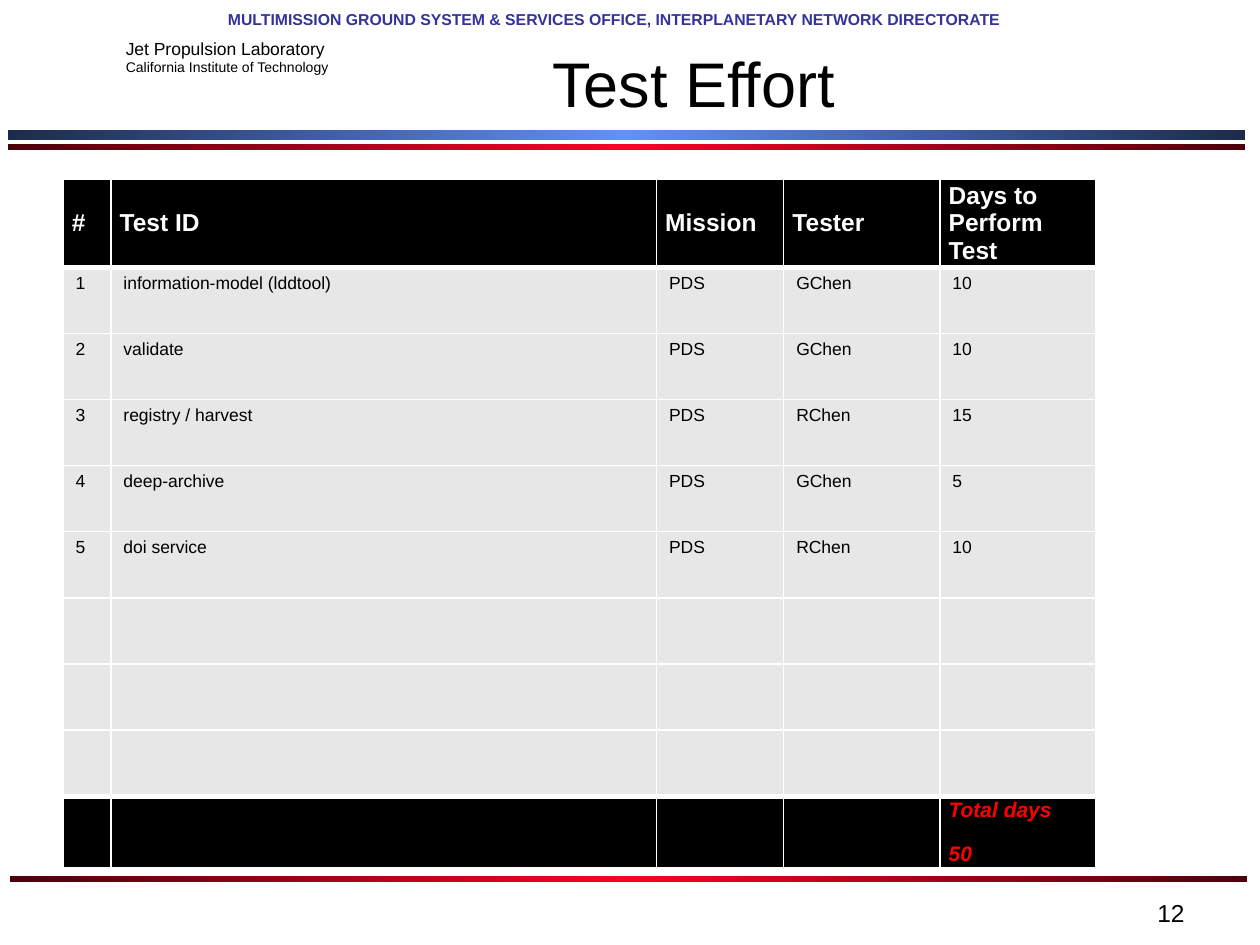
from copy import deepcopy
from pptx import Presentation
from pptx.dml.color import RGBColor
from pptx.enum.shapes import MSO_SHAPE
from pptx.enum.text import MSO_ANCHOR, PP_ALIGN
from pptx.oxml import parse_xml
from pptx.oxml.ns import nsdecls, qn
from pptx.util import Inches, Pt

RECTANGLE = MSO_SHAPE.RECTANGLE
MIDDLE = MSO_ANCHOR.MIDDLE
LEFT, CENTER, RIGHT, JUSTIFY = PP_ALIGN.LEFT, PP_ALIGN.CENTER, PP_ALIGN.RIGHT, PP_ALIGN.JUSTIFY

COLORS = {
    "black": "000000", "white": "FFFFFF", "gray": "E7E7E7", "red": "FF0000",
    "navy": "333399", "blue edge": "1D2B4B", "blue center": "618FFD",
    "red edge": "4B000C", "red center": "FC0128",
}
FONT = "Arial"
TITLE = "Test Effort"
OFFICE = "MULTIMISSION GROUND SYSTEM & SERVICES OFFICE, INTERPLANETARY NETWORK DIRECTORATE"
BARS = [
    (0.06, 1.03, 0.08, "blue"),
    (0.06, 1.14, 0.05, "red"),
    (0.08, 6.95, 0.05, "red"),
]
HEADERS = ["#", "Test ID", "Mission", "Tester", "Days to Perform Test"]
TESTS = [
    ("1", "information-model (lddtool)", "PDS", "GChen", "10"),
    ("2", "validate", "PDS", "GChen", "10"),
    ("3", "registry / harvest", "PDS", "RChen", "15"),
    ("4", "deep-archive", "PDS", "GChen", "5"),
    ("5", "doi service", "PDS", "RChen", "10"),
]
EMPTY_ROWS = 3
TOTAL = ("", "", "", "", "Total days\n50")
COLUMN_WIDTHS = [0.38, 4.33, 1.01, 1.24, 1.24]
TABLE_HEIGHT = 5.25


def rgb(name):
    return RGBColor.from_string(COLORS[name])


def style(para, size, color="black", bold=False, italic=False, align=LEFT):
    para.alignment = align
    for span in para.runs:
        font = span.font
        font.name, font.size, font.bold, font.italic = FONT, Pt(size), bold, italic
        font.color.rgb = rgb(color)


def add_text(slide, area, lines, wrap=True, inset=True, **look):
    box = slide.shapes.add_textbox(*map(Inches, area))
    frame = box.text_frame
    frame.word_wrap = wrap
    if not inset:
        frame.margin_left = frame.margin_right = frame.margin_top = frame.margin_bottom = 0
    frame.text = "\n".join(text for text, size in lines)
    for para, (text, size) in zip(frame.paragraphs, lines):
        style(para, size, **look)


def add_bar(slide, left, top, height, hue):
    bar = slide.shapes.add_shape(RECTANGLE, Inches(left), Inches(top), Inches(9.82), Inches(height))
    bar.shadow.inherit = False
    bar.line.fill.background()
    bar.fill.gradient()
    bar.fill.gradient_angle = 0
    stop_list = bar._element.spPr.find(".//" + qn("a:gsLst"))
    stop_list.insert(1, deepcopy(stop_list[0]))
    for stop, position, part in zip(bar.fill.gradient_stops, (0, 0.5, 1), ("edge", "center", "edge")):
        stop.position = position
        stop.color.rgb = rgb(f"{hue} {part}")


def format_cell(cell, text, fill, top=1, bottom=1, dense=False, **look):
    properties = cell._tc.get_or_add_tcPr()
    for side, width in (("L", 1), ("R", 1), ("T", top), ("B", bottom)):
        properties.append(parse_xml(
            f'<a:ln{side} {nsdecls("a")} w="{Pt(width)}"><a:solidFill>'
            f'<a:srgbClr val="{COLORS["white"]}"/></a:solidFill></a:ln{side}>'))
    cell.fill.solid()
    cell.fill.fore_color.rgb = rgb(fill)
    if not text:
        return
    cell.text_frame.text = text
    if dense:
        cell.vertical_anchor = MIDDLE
        cell.margin_left = cell.margin_right = Inches(0.07)
        cell.margin_top = cell.margin_bottom = 0
    for index, para in enumerate(cell.text_frame.paragraphs):
        if dense:
            para.space_after = Pt(6)
            para.space_before = Pt(6 if index else 0)
        style(para, **look)


def add_test_table(slide):
    blanks = [("",) * len(HEADERS)] * EMPTY_ROWS
    rows = [HEADERS, *TESTS, *blanks, TOTAL]
    last = len(rows) - 1
    table = slide.shapes.add_table(
        len(rows), len(HEADERS), Inches(0.5), Inches(1.42),
        Inches(sum(COLUMN_WIDTHS)), Inches(TABLE_HEIGHT)).table
    for column, width in zip(table.columns, COLUMN_WIDTHS):
        column.width = Inches(width)
    body = dict(fill="gray", size=10)
    looks = {
        0: dict(fill="black", bottom=3, dense=True, size=14, color="white", bold=True),
        1: dict(body, top=3),
        last - 1: dict(body, bottom=3),
        last: dict(fill="black", top=3, dense=True, size=12, color="red",
                   bold=True, italic=True, align=JUSTIFY),
    }
    for row, texts in enumerate(rows):
        for column, text in enumerate(texts):
            format_cell(table.cell(row, column), text, **looks.get(row, body))


def main():
    deck = Presentation()
    deck.slide_width, deck.slide_height = Inches(10), Inches(7.5)
    slide = deck.slides.add_slide(deck.slide_layouts[5])

    for bar in BARS:
        add_bar(slide, *bar)
    add_text(slide, (1.62, 0.08, 6.5, 0.17), [(OFFICE, 9)],
             inset=False, color="navy", bold=True, align=CENTER)
    add_text(slide, (0.9, 0.25, 1.85, 0.4),
             [("Jet Propulsion Laboratory", 10), ("California Institute of Technology", 8)], wrap=False)

    title = slide.shapes.title
    title.left, title.top, title.width, title.height = map(Inches, (2.67, 0.3, 5.67, 0.7))
    title.text_frame.text = TITLE
    title.text_frame.vertical_anchor = MIDDLE
    style(title.text_frame.paragraphs[0], 36, align=CENTER)

    add_text(slide, (7.17, 7.08, 2.33, 0.27), [("12", 14)], align=RIGHT)
    add_test_table(slide)
    deck.save("out.pptx")


if __name__ == "__main__":
    main()
